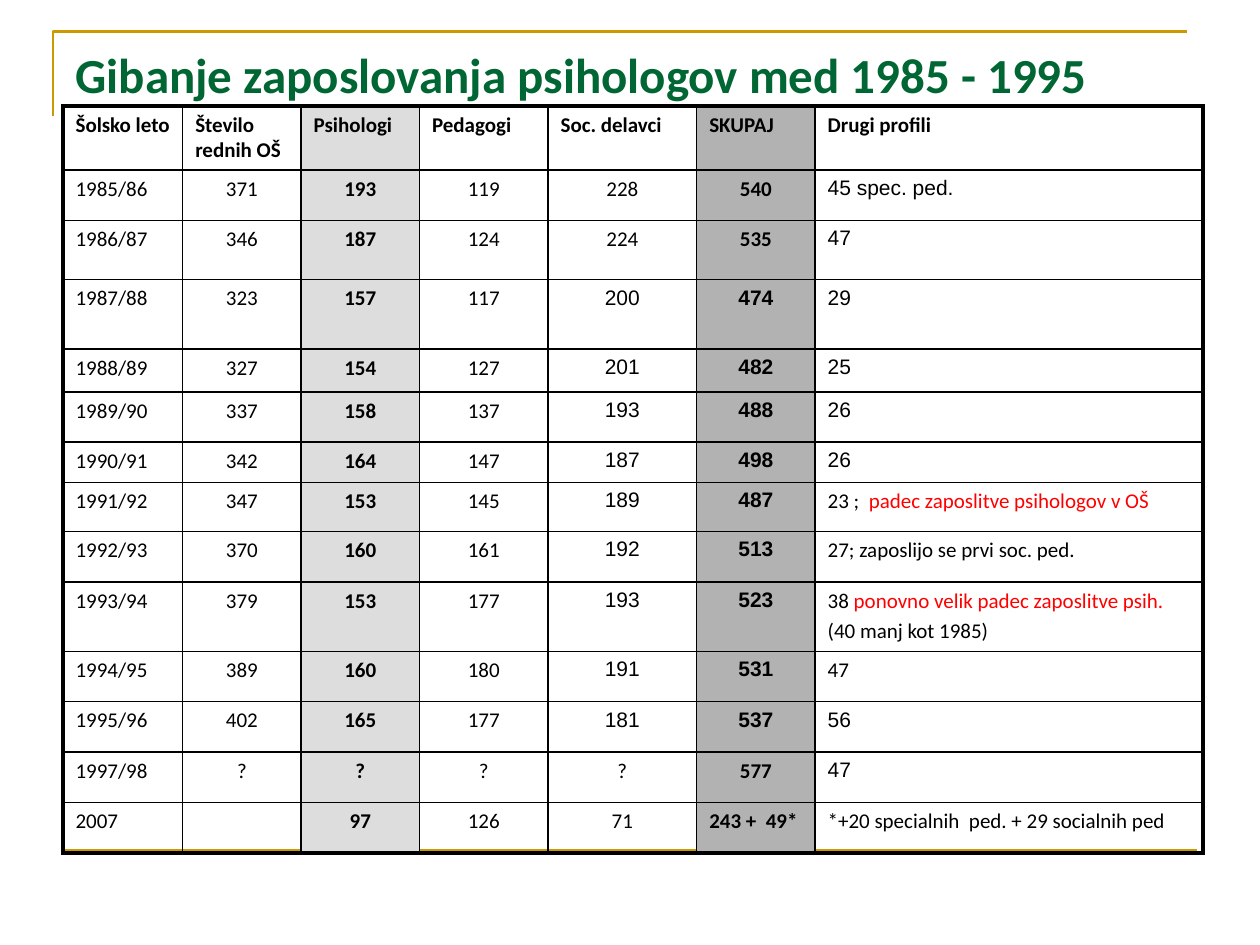
"""Build a slide with a table of school counsellor employment by school year."""
from lxml import etree
from pptx import Presentation
from pptx.dml.color import RGBColor
from pptx.enum.shapes import MSO_CONNECTOR
from pptx.enum.text import MSO_ANCHOR, PP_ALIGN
from pptx.oxml.ns import qn
from pptx.util import Inches, Pt

STRAIGHT = MSO_CONNECTOR.STRAIGHT
TOP = MSO_ANCHOR.TOP
LEFT, CENTER = PP_ALIGN.LEFT, PP_ALIGN.CENTER

THEME = {
    "gold": "CC9900", "green": "006633", "black": "000000", "red": "FF0000",
    "light": "DDDDDD", "grey": "B2B2B2",
    "font": "Calibri", "alt_font": "Arial",
    "title_size": 28, "cell_size": 12, "cell_gap": 2.4,
    "rule": 1.5, "thin": 1, "thick": 2.25,
}

TITLE = "Gibanje zaposlovanja psihologov med 1985 - 1995"
HEADER = ["Šolsko leto", "Število rednih OŠ", "Psihologi", "Pedagogi",
          "Soc. delavci", "SKUPAJ", "Drugi profili"]
DROP_1991 = [[("23 ; ", "black"), (" padec zaposlitve psihologov v OŠ", "red")]]
DROP_1993 = [[("38 ", "black"), ("ponovno velik padec zaposlitve psih.", "red")],
             [("(40 manj kot 1985)", "black")]]
YEARS = [
    ["1985/86", "371", "193", "119", "228", "540", "45 spec. ped."],
    ["1986/87", "346", "187", "124", "224", "535", "47"],
    ["1987/88", "323", "157", "117", "200", "474", "29"],
    ["1988/89", "327", "154", "127", "201", "482", "25"],
    ["1989/90", "337", "158", "137", "193", "488", "26"],
    ["1990/91", "342", "164", "147", "187", "498", "26"],
    ["1991/92", "347", "153", "145", "189", "487", DROP_1991],
    ["1992/93", "370", "160", "161", "192", "513", "27; zaposlijo se prvi soc. ped."],
    ["1993/94", "379", "153", "177", "193", "523", DROP_1993],
    ["1994/95", "389", "160", "180", "191", "531", "47"],
    ["1995/96", "402", "165", "177", "181", "537", "56"],
    ["1997/98", "?", "?", "?", "?", "577", "47"],
    ["2007", "", "97", "126", "71", "243 +  49*", "*+20 specialnih  ped. + 29 socialnih ped"],
]
ROWS = [HEADER] + YEARS
COL_WIDTHS = [0.95, 0.94, 0.94, 1.02, 1.18, 0.94, 3.08]
ROW_HEIGHTS = [0.51, 0.4, 0.47, 0.55, 0.34, 0.4, 0.32, 0.39, 0.4, 0.55, 0.4, 0.4, 0.4, 0.4]
WORKERS, TOTAL, OTHERS = 4, 5, 6
COLUMN_FILLS = {2: "light", TOTAL: "grey"}
ALT_FONT_ROWS = {WORKERS: range(3, 12), TOTAL: range(3, 12),
                 OTHERS: [1, 2, 3, 4, 5, 6, 11, 12]}


def color(key):
    return RGBColor.from_string(THEME[key])


def style_font(font, size, key, bold, family):
    font.name, font.size, font.bold = THEME[family], Pt(THEME[size]), bold
    font.color.rgb = color(key)


def add_frame(slide):
    corner = slide.shapes.build_freeform(Inches(0.42), Inches(0.92))
    corner.add_line_segments([(Inches(0.42), Inches(0.25)),
                              (Inches(9.42), Inches(0.25))], close=False)
    bracket = corner.convert_to_shape()
    bracket.shadow.inherit = False
    bracket.fill.background()
    footer = slide.shapes.add_connector(
        STRAIGHT, Inches(0.5), Inches(6.75), Inches(9.5), Inches(6.75))
    etree.SubElement(footer._element.spPr, qn("a:effectLst"))
    for rule in (bracket, footer):
        rule.line.color.rgb = color("gold")
        rule.line.width = Pt(THEME["rule"])


def add_title(slide):
    title = slide.shapes.title
    title.left, title.top = Inches(0.5), Inches(0.3)
    title.width, title.height = Inches(9), Inches(1.25)
    title.text_frame.text = TITLE
    title.text_frame.vertical_anchor = TOP
    heading = title.text_frame.paragraphs[0]
    heading.alignment = LEFT
    style_font(heading.font, "title_size", "green", True, "font")


def set_borders(cell, row, col):
    outer = {"L": col == 0, "R": col == len(HEADER) - 1,
             "T": row == 0, "B": row == len(ROWS) - 1}
    for side, is_outer in outer.items():
        width = Pt(THEME["thick" if is_outer else "thin"])
        border = etree.SubElement(cell._tc.get_or_add_tcPr(), qn(f"a:ln{side}"), w=str(width))
        fill = etree.SubElement(border, qn("a:solidFill"))
        etree.SubElement(fill, qn("a:srgbClr"), val=THEME["black"])


def fill_cell(cell, content, row, col):
    set_borders(cell, row, col)
    if col in COLUMN_FILLS:
        cell.fill.solid()
        cell.fill.fore_color.rgb = color(COLUMN_FILLS[col])
    else:
        cell.fill.background()
    lines = [[(content, "black")]] if isinstance(content, str) else content
    is_left = row == 0 or col in (0, OTHERS) or (row == len(ROWS) - 1 and col == TOTAL)
    family = "alt_font" if row in ALT_FONT_ROWS.get(col, []) else "font"
    for index, line in enumerate(lines):
        frame = cell.text_frame
        paragraph = frame.add_paragraph() if index else frame.paragraphs[0]
        paragraph.alignment = LEFT if is_left else CENTER
        paragraph.space_before = Pt(THEME["cell_gap"])
        style_font(paragraph.font, "cell_size", "black", row == 0 or col in COLUMN_FILLS, family)
        for text, key in line:
            if text:
                run = paragraph.add_run()
                run.text = text
                if key != "black":
                    run.font.color.rgb = color(key)


def add_staff_table(slide):
    staff = slide.shapes.add_table(
        len(ROWS), len(HEADER), Inches(0.5), Inches(0.84),
        Inches(sum(COL_WIDTHS)), Inches(sum(ROW_HEIGHTS))).table
    staff.first_row = staff.horz_banding = False
    for column, width in zip(staff.columns, COL_WIDTHS):
        column.width = Inches(width)
    for row, (values, height) in enumerate(zip(ROWS, ROW_HEIGHTS)):
        staff.rows[row].height = Inches(height)
        for col, content in enumerate(values):
            fill_cell(staff.cell(row, col), content, row, col)


def main():
    deck = Presentation()
    deck.slide_width, deck.slide_height = Inches(10), Inches(7.5)
    slide = deck.slides.add_slide(deck.slide_layouts[5])
    add_frame(slide)
    add_title(slide)
    add_staff_table(slide)
    deck.save("out.pptx")


if __name__ == "__main__":
    main()
